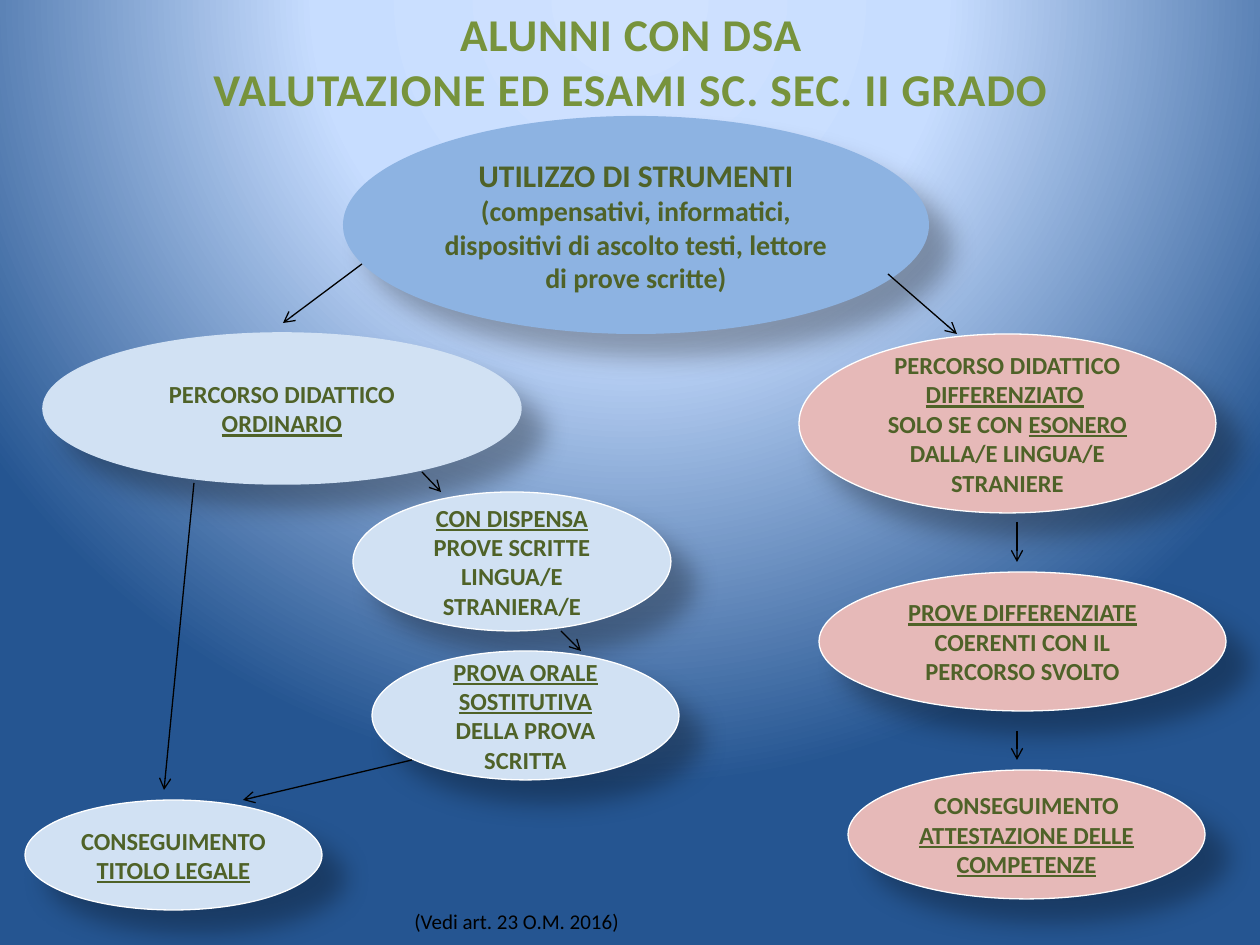
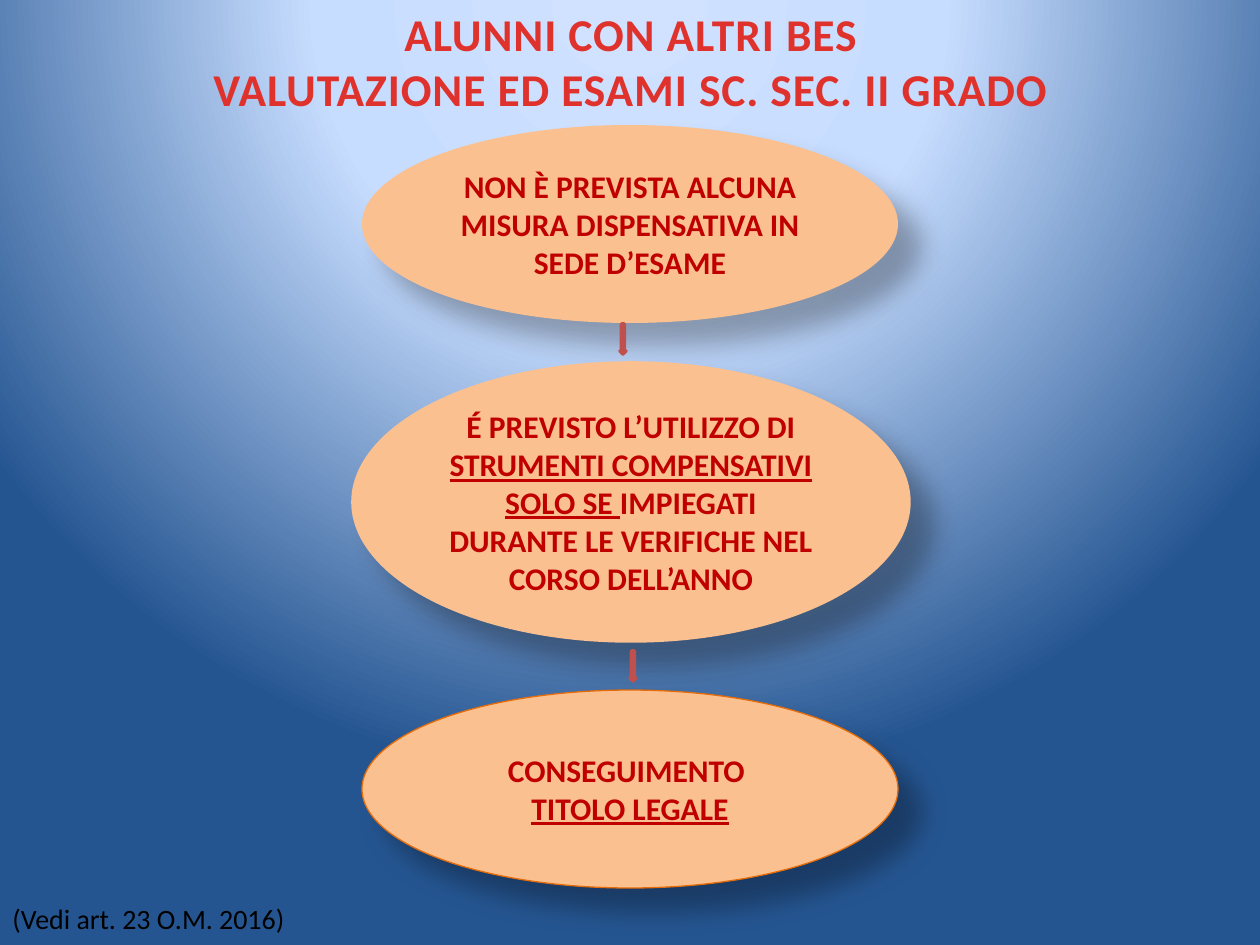
from collections import namedtuple

from lxml import etree
from pptx import Presentation
from pptx.dml.color import RGBColor
from pptx.enum.shapes import MSO_CONNECTOR, MSO_SHAPE
from pptx.enum.text import MSO_ANCHOR, MSO_AUTO_SIZE, PP_ALIGN
from pptx.oxml import parse_xml
from pptx.oxml.ns import nsdecls, qn
from pptx.util import Emu, Pt

PX_PER_INCH = 126
FONT = "Calibri"
OVAL = MSO_SHAPE.OVAL
DOWN_ARROW = MSO_SHAPE.DOWN_ARROW
STRAIGHT = MSO_CONNECTOR.STRAIGHT
CENTER = PP_ALIGN.CENTER
LEFT = PP_ALIGN.LEFT
MIDDLE = MSO_ANCHOR.MIDDLE
FIT_SHAPE = MSO_AUTO_SIZE.SHAPE_TO_FIT_TEXT

BLACK = RGBColor(0x00, 0x00, 0x00)
WHITE = RGBColor(0xFF, 0xFF, 0xFF)
OLIVE = RGBColor(0x77, 0x93, 0x3C)
DARK_OLIVE = RGBColor(0x4F, 0x62, 0x28)
SKY = RGBColor(0x8D, 0xB3, 0xE2)
PALE_BLUE = RGBColor(0xD1, 0xE1, 0xF3)
PINK = RGBColor(0xE6, 0xB9, 0xB8)
RED = RGBColor(0xE0, 0x32, 0x2D)
DARK_RED = RGBColor(0xC0, 0x00, 0x00)
BRICK = RGBColor(0xC0, 0x50, 0x4D)
PEACH = RGBColor(0xFA, 0xC0, 0x90)
ORANGE = RGBColor(0xE4, 0x6C, 0x0A)
BACKDROP_STOPS = (
    (0, RGBColor(0xD0, 0xE2, 0xFF)),
    (40, RGBColor(0xC7, 0xDD, 0xFF)),
    (100, RGBColor(0x25, 0x55, 0x91)),
)

SUBTITLE = "VALUTAZIONE ED ESAMI SC. SEC. II GRADO"
REFERENCE = "(Vedi art. 23 O.M. 2016)"

Box = namedtuple("Box", "left top width height")


def px(length):
    return Emu(round(length * 914400 / PX_PER_INCH))


def emu_box(box):
    return [px(length) for length in box]


def inside(region, left, top, width, height):
    """Place a box by its offset from the top left corner of a region."""
    return Box(region.left + left, region.top + top, width, height)


def write(frame, lines, size, color, bold=True, align=CENTER, spacing=0):
    """Write one paragraph per line; a bar switches underlining on and off."""
    for index, line in enumerate(lines):
        para = frame.paragraphs[0] if index == 0 else frame.add_paragraph()
        para.alignment = align
        for position, text in enumerate(line.split("|")):
            if not text:
                continue
            span = para.add_run()
            span.text = text
            span.font.name = FONT
            span.font.size = Pt(size)
            span.font.bold = bold
            span.font.color.rgb = color
            if position % 2:
                span.font.underline = True
            if spacing:
                span.font._element.set("spc", str(spacing))


def paint(shape, fill, line=None, weight=0.75):
    shape.shadow.inherit = False
    shape.fill.solid()
    shape.fill.fore_color.rgb = fill
    if line is None:
        shape.line.fill.background()
    else:
        shape.line.color.rgb = line
        shape.line.width = Pt(weight)


def cast_shadow(shape):
    effects = shape._element.spPr.find(qn("a:effectLst"))
    effects.append(parse_xml(
        f'<a:outerShdw {nsdecls("a")} blurRad="{Pt(15)}" dist="{Pt(18)}" '
        'dir="2700000" rotWithShape="0"><a:srgbClr val="000000">'
        '<a:alpha val="30000"/></a:srgbClr></a:outerShdw>'))


def add_bubble(page, box, lines, fill, line=WHITE, weight=0.75,
               size=14, color=DARK_OLIVE):
    bubble = page.shapes.add_shape(OVAL, *emu_box(box))
    paint(bubble, fill, line, weight)
    cast_shadow(bubble)
    frame = bubble.text_frame
    frame.word_wrap = True
    frame.vertical_anchor = MIDDLE
    write(frame, lines, size, color)
    return bubble


def add_arrow(page, region, start, end):
    """Draw an arrow between two points given relative to a region."""
    points = [px(value) for x, y in (start, end)
              for value in (region.left + x, region.top + y)]
    arrow = page.shapes.add_connector(STRAIGHT, *points)
    arrow.line.color.rgb = BLACK
    arrow.line.width = Pt(0.75)
    etree.SubElement(arrow.line._get_or_add_ln(), qn("a:tailEnd"), type="arrow")
    etree.SubElement(arrow._element.spPr, qn("a:effectLst"))


def add_title(page, heading, color):
    title = page.shapes.add_textbox(*emu_box(Box(64, 0, 1134, 100)))
    title.text_frame.word_wrap = True
    write(title.text_frame, [heading, SUBTITLE], 26, color, spacing=50)


def add_reference(page, box, size):
    note = page.shapes.add_textbox(*emu_box(box))
    note.text_frame.word_wrap = False
    note.text_frame.auto_size = FIT_SHAPE
    write(note.text_frame, [REFERENCE], size, BLACK, bold=False, align=LEFT)


def add_backdrop(page):
    """Fill the page with a radial gradient centred above its top edge."""
    stops = "".join(
        f'<a:gs pos="{position * 1000}"><a:srgbClr val="{color}"/></a:gs>'
        for position, color in BACKDROP_STOPS)
    page._element.cSld.insert(0, parse_xml(
        f'<p:bg {nsdecls("p", "a")}><p:bgPr><a:gradFill rotWithShape="1">'
        f'<a:gsLst>{stops}</a:gsLst><a:path path="circle">'
        '<a:fillToRect l="50000" t="-80000" r="50000" b="180000"/></a:path>'
        '</a:gradFill><a:effectLst/></p:bgPr></p:bg>'))


def add_page(deck, heading, title_color):
    page = deck.slides.add_slide(deck.slide_layouts[6])
    add_backdrop(page)
    add_title(page, heading, title_color)
    return page


def add_tools(page, region):
    tools = add_bubble(page, region, ["UTILIZZO DI STRUMENTI"], SKY, None, size=18)
    detail = ("(compensativi, informatici, dispositivi di ascolto testi, "
              "lettore di prove scritte)")
    para = tools.text_frame.add_paragraph()
    para.alignment = CENTER
    span = para.add_run()
    span.text = detail
    span.font.name = FONT
    span.font.size = Pt(16)
    span.font.bold = True
    span.font.color.rgb = DARK_OLIVE
    add_arrow(page, region, (545, 158), (614, 218))
    add_arrow(page, region, (19, 148), (-60, 207))


def add_ordinary_path(page, region):
    add_bubble(page, inside(region, 19, 0, 476, 149),
               ["PERCORSO DIDATTICO |ORDINARIO"], PALE_BLUE, PALE_BLUE, 2)
    steps = (
        ((328, 158, 318, 139), "|CON DISPENSA |PROVE SCRITTE LINGUA/E STRANIERA/E"),
        ((347, 317, 307, 129), "|PROVA ORALE SOSTITUTIVA |DELLA PROVA SCRITTA"),
        ((0, 466, 297, 110), "CONSEGUIMENTO |TITOLO LEGALE"),
    )
    for place, text in steps:
        add_bubble(page, inside(region, *place), [text], PALE_BLUE)
    for start, end in (((169, 149), (139, 456)), ((387, 426), (218, 466)),
                       ((397, 138), (416, 158)), ((536, 297), (556, 317))):
        add_arrow(page, region, start, end)


def add_differentiated_path(page, region):
    steps = (
        ((0, 0, 417, 179),
         ["PERCORSO DIDATTICO |DIFFERENZIATO| ",
          "SOLO SE CON |ESONERO| DALLA/E LINGUA/E STRANIERE"]),
        ((20, 238, 407, 139),
         ["|PROVE DIFFERENZIATE |COERENTI CON IL PERCORSO SVOLTO"]),
        ((49, 436, 357, 129),
         ["CONSEGUIMENTO |ATTESTAZIONE DELLE COMPETENZE"]),
    )
    for place, lines in steps:
        add_bubble(page, inside(region, *place), lines, PINK)
    for top, bottom in ((188, 228), (397, 426)):
        add_arrow(page, region, (218, top), (218, bottom))


def add_exam_rules(page, region):
    steps = (
        ((9, 0, 536, 198), None, 0,
         ["NON È PREVISTA ALCUNA MISURA DISPENSATIVA IN SEDE D’ESAME"]),
        ((0, 238, 556, 278), PEACH, 2,
         ["É PREVISTO L’UTILIZZO DI |STRUMENTI COMPENSATIVI SOLO SE |"
          "IMPIEGATI DURANTE LE VERIFICHE NEL CORSO DELL’ANNO"]),
        ((9, 565, 536, 198), ORANGE, 0.75,
         ["CONSEGUIMENTO ", "|TITOLO LEGALE"]),
    )
    for place, line, weight, lines in steps:
        add_bubble(page, inside(region, *place), lines, PEACH, line, weight,
                   size=18, color=DARK_RED)
    for left, top in ((267, 199), (277, 526)):
        pointer = page.shapes.add_shape(
            DOWN_ARROW, *emu_box(inside(region, left, top, 6, 30)))
        paint(pointer, WHITE, BRICK, 2)


def add_dsa_page(deck):
    page = add_page(deck, "ALUNNI CON DSA", OLIVE)
    add_tools(page, Box(343, 116, 586, 218))
    add_ordinary_path(page, Box(25, 334, 654, 576))
    add_differentiated_path(page, Box(799, 334, 427, 565))
    add_reference(page, Box(402, 902, 232, 38), 12)


def add_bes_page(deck):
    page = add_page(deck, "ALUNNI CON ALTRI BES", RED)
    add_exam_rules(page, Box(353, 125, 556, 763))
    add_reference(page, Box(0, 895, 307, 47), 16)


def main():
    deck = Presentation()
    deck.slide_width = px(1260)
    deck.slide_height = px(945)
    add_dsa_page(deck)
    add_bes_page(deck)
    deck.save("out.pptx")


if __name__ == "__main__":
    main()
